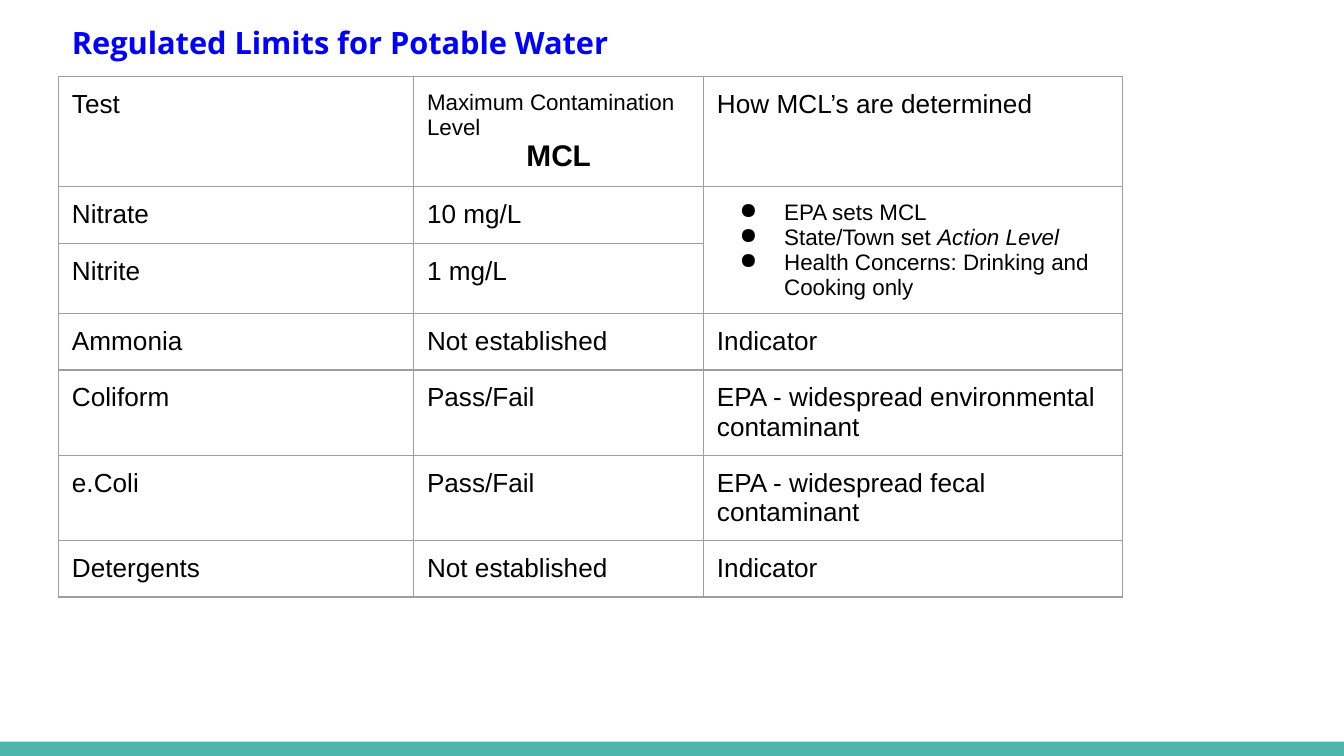
from dataclasses import dataclass

from lxml.etree import SubElement
from pptx import Presentation
from pptx.dml.color import RGBColor
from pptx.enum.shapes import MSO_SHAPE
from pptx.enum.text import MSO_ANCHOR, MSO_AUTO_SIZE, PP_ALIGN
from pptx.oxml.ns import qn
from pptx.util import Cm, Pt


@dataclass(frozen=True)
class Theme:
    title_font: str = "Open Sans"
    body_font: str = "Arial"
    title_color: RGBColor = RGBColor(0x00, 0x00, 0xFF)
    text_color: RGBColor = RGBColor(0x00, 0x00, 0x00)
    band_color: RGBColor = RGBColor(0x4D, 0xB6, 0xAC)
    border_color: str = "9E9E9E"
    border_width: Pt = Pt(0.75)
    title_size: Pt = Pt(16.5)
    strong_size: Pt = Pt(16)
    cell_size: Pt = Pt(14)
    small_size: Pt = Pt(12)
    inset: Cm = Cm(0.25)


theme = Theme()


def add_span(para, text, size=theme.cell_size, font=theme.body_font,
             color=theme.text_color, bold=False, italic=False):
    span = para.add_run()
    span.text = text
    span.font.name = font
    span.font.size = size
    span.font.color.rgb = color
    span.font.bold = bold
    span.font.italic = italic


def add_borders(cell):
    properties = cell._tc.get_or_add_tcPr()
    for side in ("a:lnL", "a:lnR", "a:lnT", "a:lnB"):
        line = SubElement(properties, qn(side), w=str(theme.border_width))
        fill = SubElement(line, qn("a:solidFill"))
        SubElement(fill, qn("a:srgbClr"), val=theme.border_color)


deck = Presentation()
deck.slide_width, deck.slide_height = Cm(25.4), Cm(14.29)
page = deck.slides.add_slide(deck.slide_layouts[5])

# Bottom band
band = page.shapes.add_shape(MSO_SHAPE.RECTANGLE, Cm(0), Cm(14.02), deck.slide_width, Cm(0.27))
band.shadow.inherit = False
band.fill.solid()
band.fill.fore_color.rgb = theme.band_color
band.line.fill.background()

# Title
title = page.shapes.title
title.left, title.top, title.width, title.height = Cm(1.11), Cm(0.25), Cm(24.08), Cm(1.04)
frame = title.text_frame
frame.word_wrap = True
frame.auto_size = MSO_AUTO_SIZE.NONE
frame.vertical_anchor = MSO_ANCHOR.TOP
frame.margin_left = frame.margin_right = frame.margin_top = frame.margin_bottom = theme.inset
para = frame.paragraphs[0]
para.alignment = PP_ALIGN.LEFT
para.line_spacing = 0.95
para.space_after = Pt(12)
add_span(para, "Regulated Limits for Potable Water", theme.title_size,
         theme.title_font, theme.title_color, bold=True)

# Table grid: None marks cells with mixed formatting, filled further down
rows = [
    ("Test", None, "How MCL’s are determined"),
    ("Nitrate", "10 mg/L", None),
    ("Nitrite", "1 mg/L", None),
    ("Ammonia", "Not established", "Indicator"),
    ("Coliform", "Pass/Fail", "EPA - widespread environmental contaminant"),
    ("e.Coli", "Pass/Fail", "EPA - widespread fecal contaminant"),
    ("Detergents", "Not established", "Indicator"),
]
column_widths = [Cm(6.71), Cm(5.48), Cm(7.92)]
header_height, row_height = Cm(1.63), Cm(1.07)
table = page.shapes.add_table(
    len(rows), len(column_widths), Cm(1.11), Cm(1.45), sum(column_widths),
    header_height + row_height * (len(rows) - 1)).table
table.first_row = table.horz_banding = False
for column, width in zip(table.columns, column_widths):
    column.width = width
for row in table.rows:
    row.height = row_height
table.rows[0].height = header_height

for row, texts in zip(table.rows, rows):
    for cell, text in zip(row.cells, texts):
        cell.margin_left = cell.margin_right = theme.inset
        cell.margin_top = cell.margin_bottom = theme.inset
        add_borders(cell)
        cell.fill.background()
        if text:
            add_span(cell.text_frame.paragraphs[0], text)

# Header of the limit column
frame = table.cell(0, 1).text_frame
add_span(frame.paragraphs[0], "Maximum Contamination Level", theme.small_size)
para = frame.add_paragraph()
para.alignment = PP_ALIGN.CENTER
add_span(para, "MCL", theme.strong_size, bold=True)

# Bulleted cell shared by nitrate and nitrite
rules_cell = table.cell(1, 2)
rules_cell.merge(table.cell(2, 2))
frame = rules_cell.text_frame
rules = [
    [("EPA sets MCL", False)],
    [("State/Town set ", False), ("Action Level", True)],
    [("Health Concerns: Drinking and Cooking only", False)],
]
for index, rule in enumerate(rules):
    para = frame.add_paragraph() if index else frame.paragraphs[0]
    properties = para._p.get_or_add_pPr()
    properties.set("marL", str(Cm(1.27)))
    properties.set("indent", str(-Cm(0.84)))
    bullet_color = SubElement(properties, qn("a:buClr"))
    SubElement(bullet_color, qn("a:srgbClr"), val=str(theme.text_color))
    SubElement(properties, qn("a:buChar"), char="●")
    for text, italic in rule:
        add_span(para, text, theme.small_size, italic=italic)

deck.save("out.pptx")
